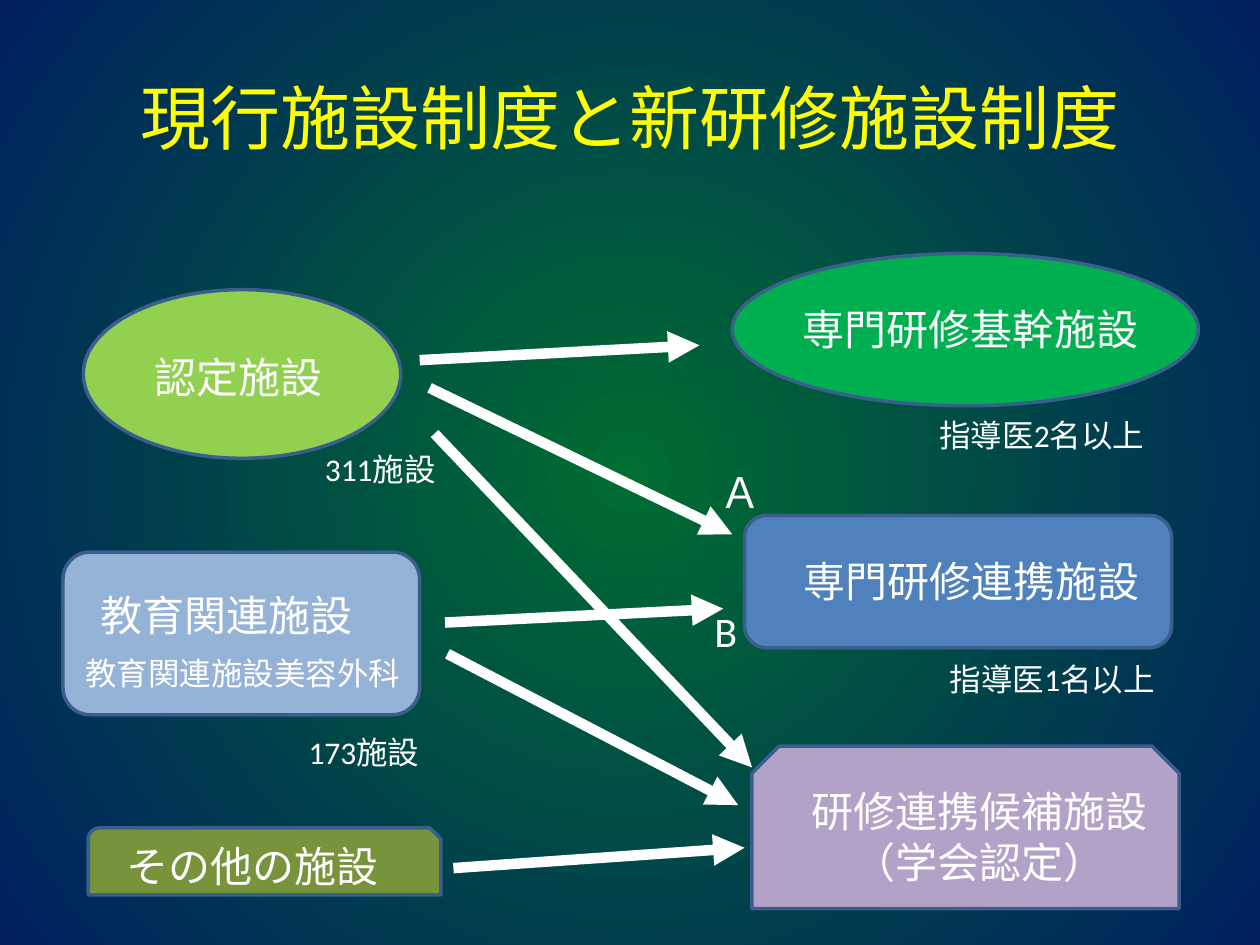
from dataclasses import dataclass

from lxml import etree
from pptx import Presentation
from pptx.dml.color import RGBColor
from pptx.enum.shapes import MSO_CONNECTOR, MSO_SHAPE
from pptx.enum.text import MSO_ANCHOR, MSO_AUTO_SIZE, PP_ALIGN
from pptx.oxml.ns import qn
from pptx.util import Cm, Pt

ELLIPSE = MSO_SHAPE.OVAL
ROUNDED = MSO_SHAPE.ROUNDED_RECTANGLE
SNIPPED = MSO_SHAPE.SNIP_2_SAME_RECTANGLE
SNIP_ROUND = MSO_SHAPE.SNIP_ROUND_RECTANGLE
STRAIGHT = MSO_CONNECTOR.STRAIGHT
MIDDLE = MSO_ANCHOR.MIDDLE
GROW = MSO_AUTO_SIZE.SHAPE_TO_FIT_TEXT
LEFT, CENTER = PP_ALIGN.LEFT, PP_ALIGN.CENTER


@dataclass(frozen=True)
class Theme:
    font: str = "Calibri"
    title_size: int = 40
    label_size: int = 24
    note_size: int = 18
    outline_width: int = 2
    arrow_width: int = 6
    title: str = "FFFF00"
    text: str = "FFFFFF"
    outline: str = "3A5F8C"
    center: str = "006D31"
    edge: str = "002060"


THEME = Theme()

FACILITIES = [
    (ELLIPSE, "00B050", (14.76, 5.11, 9.4, 3.07),
     "専門研修基幹施設", (15.93, 5.99, 8.23, 2.51), LEFT),
    (ROUNDED, "4F81BD", (15.01, 10.39, 8.61, 2.67),
     "専門研修連携施設", (15.95, 11.07, 7.8, 1.27), LEFT),
    (ELLIPSE, "92D050", (1.68, 5.84, 6.4, 3.4),
     "認定施設", (2.87, 6.96, 4.6, 1.27), LEFT),
    (ROUNDED, "95B3D7", (1.27, 11.13, 7.19, 3.28),
     "教育関連施設", (1.78, 11.76, 6.2, 1.27), LEFT),
    (SNIPPED, "B3A2C7", (15.16, 15.04, 8.61, 3.28),
     "研修連携候補施設（学会認定）", (16.08, 15.72, 7.34, 2.31), CENTER),
    (SNIP_ROUND, "77933C", (1.78, 16.69, 7.11, 1.35),
     "その他の施設", (2.31, 16.81, 6.91, 1.27), LEFT),
]

NOTES = [
    ("教育関連施設美容外科", (1.47, 13.06, 7.39, 1.02)),
    ("311施設", (6.3, 8.94, 3, 1.02)),
    ("173施設", (5.97, 14.66, 3, 1.02)),
    ("指導医2名以上", (18.69, 8.26, 4.7, 1.02)),
    ("指導医1名以上", (18.9, 13.18, 4.7, 1.02)),
]

ROUTE_NAMES = [
    ("Ａ", (14.25, 9.27, 1.83, 1.27)),
    ("B", (14.15, 12.09, 1.83, 1.27)),
]

ARROWS = [
    (8.46, 7.26, 14.1, 6.96),
    (8.66, 7.82, 14.76, 10.77),
    (8.97, 12.55, 14.58, 12.27),
    (9.02, 13.18, 14.88, 16.23),
    (9.14, 17.5, 15.01, 17.09),
    (8.76, 8.74, 15.16, 15.47),
]


def color(value):
    return RGBColor.from_string(value)


def lengths(values):
    return [Cm(value) for value in values]


def style_paragraph(para, size, font_color, align):
    para.alignment = align
    para.font.name = THEME.font
    para.font.size = Pt(size)
    para.font.color.rgb = color(font_color)


def paint_background(slide):
    fill = slide.background.fill
    fill.gradient()
    for stop, value in zip(fill.gradient_stops, (THEME.center, THEME.edge)):
        stop.color.rgb = color(value)
    gradient = slide.element.find(".//" + qn("a:gradFill"))
    linear = gradient.find(qn("a:lin"))
    circle = etree.Element(qn("a:path"), path="circle")
    etree.SubElement(circle, qn("a:fillToRect"),
                     {side: "50000" for side in "ltrb"})
    gradient.replace(linear, circle)


def set_title(slide, text):
    title = slide.shapes.title
    title.left, title.top, title.width, title.height = lengths(
        (1.27, 0.76, 22.86, 3.18))
    title.text_frame.text = text
    title.text_frame.vertical_anchor = MIDDLE
    style_paragraph(title.text_frame.paragraphs[0], THEME.title_size,
                    THEME.title, CENTER)


def add_label(shapes, text, place, size, align=LEFT):
    box = shapes.add_textbox(*lengths(place))
    frame = box.text_frame
    frame.word_wrap = True
    frame.auto_size = GROW
    frame.text = text
    style_paragraph(frame.paragraphs[0], size, THEME.text, align)


def add_facility(slide, kind, fill, place, name, name_place, align):
    group = slide.shapes.add_group_shape()
    shape = group.shapes.add_shape(kind, *lengths(place))
    shape.shadow.inherit = False
    shape.fill.solid()
    shape.fill.fore_color.rgb = color(fill)
    shape.line.color.rgb = color(THEME.outline)
    shape.line.width = Pt(THEME.outline_width)
    add_label(group.shapes, name, name_place, THEME.label_size, align)


def add_arrow(slide, ends):
    arrow = slide.shapes.add_connector(STRAIGHT, *lengths(ends))
    arrow.line.color.rgb = color(THEME.text)
    arrow.line.width = Pt(THEME.arrow_width)
    properties = arrow.element.spPr
    etree.SubElement(properties.find(qn("a:ln")), qn("a:tailEnd"),
                     type="triangle")
    etree.SubElement(properties, qn("a:effectLst"))


def main():
    deck = Presentation()
    deck.slide_width, deck.slide_height = Cm(25.4), Cm(19.05)
    slide = deck.slides.add_slide(deck.slide_layouts.get_by_name("Title Only"))
    paint_background(slide)
    set_title(slide, "現行施設制度と新研修施設制度")
    for facility in FACILITIES:
        add_facility(slide, *facility)
    for text, place in NOTES:
        add_label(slide.shapes, text, place, THEME.note_size)
    for ends in ARROWS:
        add_arrow(slide, ends)
    for text, place in ROUTE_NAMES:
        add_label(slide.shapes, text, place, THEME.label_size)
    deck.save("out.pptx")


if __name__ == "__main__":
    main()
